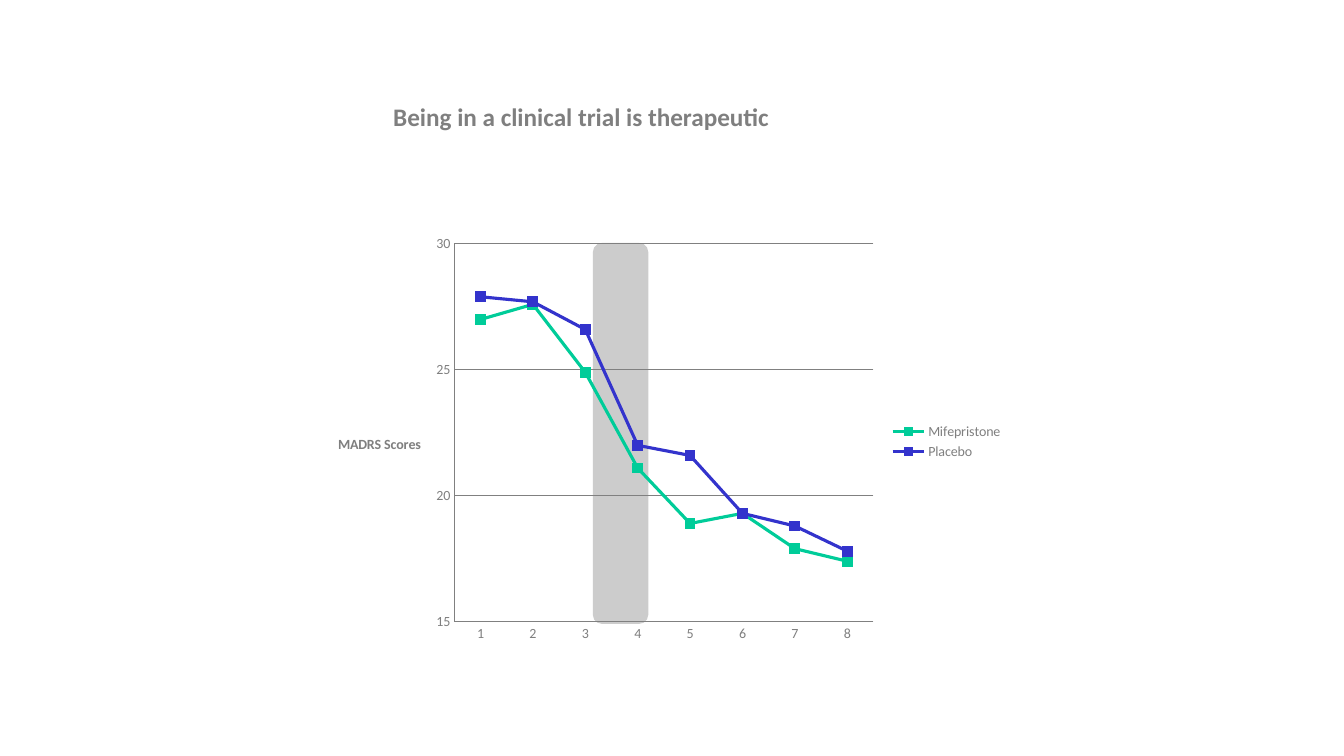
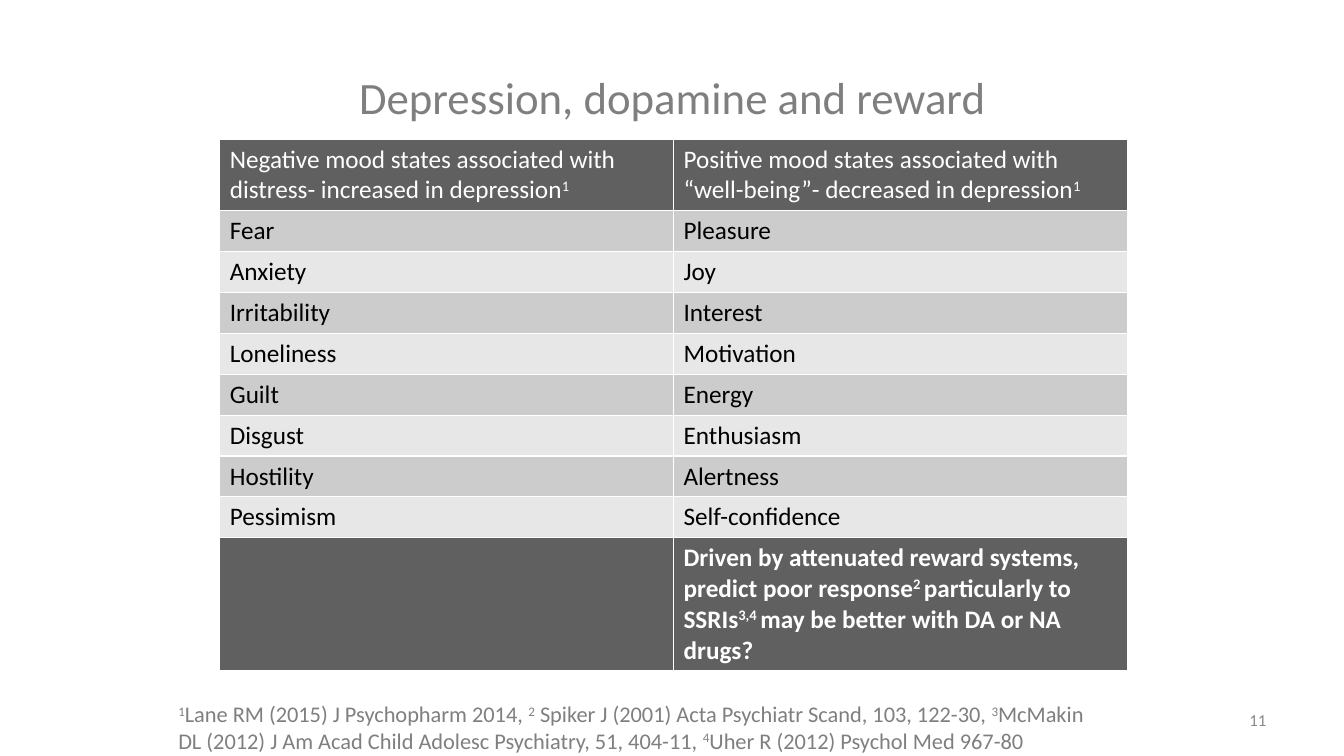
from lxml import etree
from pptx import Presentation
from pptx.chart.data import CategoryChartData
from pptx.dml.color import RGBColor
from pptx.enum import chart as ch, shapes, text
from pptx.oxml.ns import qn
from pptx.util import Inches, Pt

FONT = "Calibri"
GREY = RGBColor(0x7F, 0x7F, 0x7F)
PAGE_GREY = RGBColor(0x89, 0x89, 0x89)
GRID_GREY = RGBColor(0x80, 0x80, 0x80)
DARK = RGBColor(0x60, 0x60, 0x60)
BAND = RGBColor(0xCC, 0xCC, 0xCC)
PALE = RGBColor(0xE7, 0xE7, 0xE7)
WHITE = RGBColor(0xFF, 0xFF, 0xFF)
BLACK = RGBColor(0, 0, 0)
GREEN = RGBColor(0, 0xCC, 0x99)
BLUE = RGBColor(0x33, 0x33, 0xCC)

LEFT, CENTER, RIGHT = text.PP_ALIGN.LEFT, text.PP_ALIGN.CENTER, text.PP_ALIGN.RIGHT
TOP, MIDDLE = text.MSO_ANCHOR.TOP, text.MSO_ANCHOR.MIDDLE

MOODS = [
    ("Fear", "Pleasure"),
    ("Anxiety", "Joy"),
    ("Irritability", "Interest"),
    ("Loneliness", "Motivation"),
    ("Guilt", "Energy"),
    ("Disgust", "Enthusiasm"),
    ("Hostility", "Alertness"),
    ("Pessimism", "Self-confidence"),
]
MOOD_HEADER = (
    "Negative mood states associated with distress- increased in depression^1^",
    "Positive mood states associated with “well-being”- decreased in depression^1^",
)
MOOD_FOOTER = (
    "",
    "Driven by attenuated reward systems, predict poor response^2 ^particularly to "
    "SSRIs^3,4 ^may be better with DA or NA drugs?",
)
REFERENCES = (
    "^1^Lane RM (2015) J Psychopharm 2014, ^2^ Spiker J (2001) Acta Psychiatr Scand, 103, "
    "122-30, ^3^McMakin DL (2012) J Am Acad Child Adolesc Psychiatry, 51, 404-11, "
    "^4^Uher R (2012) Psychol Med 967-80"
)
SCORES = [
    ("Mifepristone", GREEN, (27, 27.6, 24.9, 21.1, 18.9, 19.3, 17.9, 17.4)),
    ("Placebo", BLUE, (27.9, 27.7, 26.6, 22, 21.6, 19.3, 18.8, 17.8)),
]


def style_font(font, size, color, bold=False):
    font.name, font.size, font.bold = FONT, Pt(size), bold
    font.color.rgb = color


def set_layout(parent, index, **values):
    """Give a chart part a manual layout, as fractions of the chart."""
    for old in parent.findall(qn("c:layout")):
        parent.remove(old)
    layout = etree.Element(qn("c:layout"))
    manual = etree.SubElement(layout, qn("c:manualLayout"))
    for tag, value in values.items():
        etree.SubElement(manual, qn("c:" + tag)).set("val", str(value))
    parent.insert(index, layout)


def set_borders(cell, color, width):
    tcPr = cell._tc.get_or_add_tcPr()
    for i, side in enumerate(("lnL", "lnR", "lnT", "lnB")):
        ln = etree.Element(qn("a:" + side), w=str(int(Pt(width))))
        fill = etree.SubElement(ln, qn("a:solidFill"))
        etree.SubElement(fill, qn("a:srgbClr")).set("val", str(color))
        tcPr.insert(i, ln)


class Deck:
    def __init__(self):
        self.prs = Presentation()
        self.prs.slide_width, self.prs.slide_height = Inches(13.33), Inches(7.5)
        self.s = None

    def new_slide(self):
        self.s = self.prs.slides.add_slide(self.prs.slide_layouts[5])

    def add_text(self, tf, content, size, color, bold=False, align=LEFT):
        """Fill a text frame; parts between carets are superscript."""
        p = tf.paragraphs[0]
        p.alignment = align
        for i, part in enumerate(content.split("^")):
            if part:
                r = p.add_run()
                r.text = part
                style_font(r.font, size, color, bold)
                if i % 2:
                    r.font._element.set("baseline", "30000")

    def title(self, content, box, size, bold=False, align=CENTER):
        sp = self.s.shapes.title
        sp.left, sp.top, sp.width, sp.height = map(Inches, box)
        tf = sp.text_frame
        tf.auto_size, tf.vertical_anchor = text.MSO_AUTO_SIZE.NONE, MIDDLE
        self.add_text(tf, content, size, GREY, bold, align)

    def label(self, content, box, size, color=GREY, align=LEFT, anchor=TOP):
        tf = self.s.shapes.add_textbox(*map(Inches, box)).text_frame
        tf.word_wrap, tf.vertical_anchor = True, anchor
        self.add_text(tf, content, size, color, align=align)

    def highlight(self, box):
        sp = self.s.shapes.add_shape(shapes.MSO_SHAPE.ROUNDED_RECTANGLE, *map(Inches, box))
        sp.shadow.inherit = False
        sp.fill.solid()
        sp.fill.fore_color.rgb = BAND
        sp.line.fill.background()

    def line_chart(self, box, series, axis_title):
        data = CategoryChartData()
        data.categories = [str(n + 1) for n in range(len(series[0][2]))]
        for name, _, values in series:
            data.add_series(name, values)
        chart = self.s.shapes.add_chart(
            ch.XL_CHART_TYPE.LINE_MARKERS, *map(Inches, box), data).chart
        style_font(chart.font, 10, GREY)
        chart.has_title = False
        chart.has_legend = True
        chart.legend.position = ch.XL_LEGEND_POSITION.RIGHT
        chart.legend.include_in_layout = False
        style_font(chart.legend.font, 10, GREY)
        chart.plots[0].vary_by_categories = False

        for line, (_, color, _) in zip(chart.plots[0].series, series):
            line.smooth = False
            line.format.line.width = Pt(2.25)
            line.format.line.color.rgb = color
            line.marker.style, line.marker.size = ch.XL_MARKER_STYLE.SQUARE, 7
            line.marker.format.fill.solid()
            line.marker.format.fill.fore_color.rgb = color
            line.marker.format.line.color.rgb = color

        axis = chart.value_axis
        axis.minimum_scale, axis.maximum_scale, axis.major_unit = 15, 30, 5
        axis.has_major_gridlines = True
        for ax in (axis, chart.category_axis):
            ax.major_tick_mark = ax.minor_tick_mark = ch.XL_TICK_MARK.NONE
            style_font(ax.tick_labels.font, 10, GREY)
        for part in (axis, chart.category_axis, axis.major_gridlines):
            part.format.line.width = Pt(0.75)
            part.format.line.color.rgb = GRID_GREY

        heading = axis.axis_title
        self.add_text(heading.text_frame, axis_title, 10, GREY, True)
        body = heading.text_frame._txBody.find(qn("a:bodyPr"))
        body.set("rot", "0")
        body.set("vert", "horz")
        set_layout(heading._element, 1, xMode="edge", yMode="edge", x=0.03, y=0.48)
        plot_area = chart._chartSpace.find(".//" + qn("c:plotArea"))
        set_layout(plot_area, 0, layoutTarget="inner", xMode="edge", yMode="edge",
                   x=0.2, y=0.04, w=0.6, h=0.88)

    def table(self, box, header, rows, footer, row_height):
        lines = [header, *rows, footer]
        table = self.s.shapes.add_table(len(lines), len(header), *map(Inches, box)).table
        table.first_row = table.horz_banding = False
        for i, line in enumerate(lines):
            table.rows[i].height = Inches(row_height)
            is_footer = i == len(lines) - 1
            is_edge = i == 0 or is_footer
            fill = DARK if is_edge else BAND if i % 2 else PALE
            color = WHITE if is_edge else BLACK
            for j, content in enumerate(line):
                cell = table.cell(i, j)
                cell.fill.solid()
                cell.fill.fore_color.rgb = fill
                set_borders(cell, WHITE, 1)
                self.add_text(cell.text_frame, content, 18, color, is_footer)


def main():
    deck = Deck()

    deck.new_slide()
    deck.title("Being in a clinical trial is therapeutic", (3.8, 0.96, 6.67, 0.4), 18,
               bold=True, align=LEFT)
    deck.highlight((5.88, 2.41, 0.55, 3.78))
    deck.line_chart((3.12, 2.25, 6.93, 4.26), SCORES, "MADRS Scores")

    deck.new_slide()
    deck.title("Depression, dopamine and reward", (0.67, 0.14, 12, 1.64), 32)
    deck.table((2.18, 1.38, 9, 4), MOOD_HEADER, MOODS, MOOD_FOOTER, 0.4)
    deck.label(REFERENCES, (1.67, 6.9, 9.33, 0.64), 16)
    deck.label("11", (9.56, 6.95, 3.1, 0.39), 12, PAGE_GREY, RIGHT, MIDDLE)

    deck.prs.save("out.pptx")


if __name__ == "__main__":
    main()
